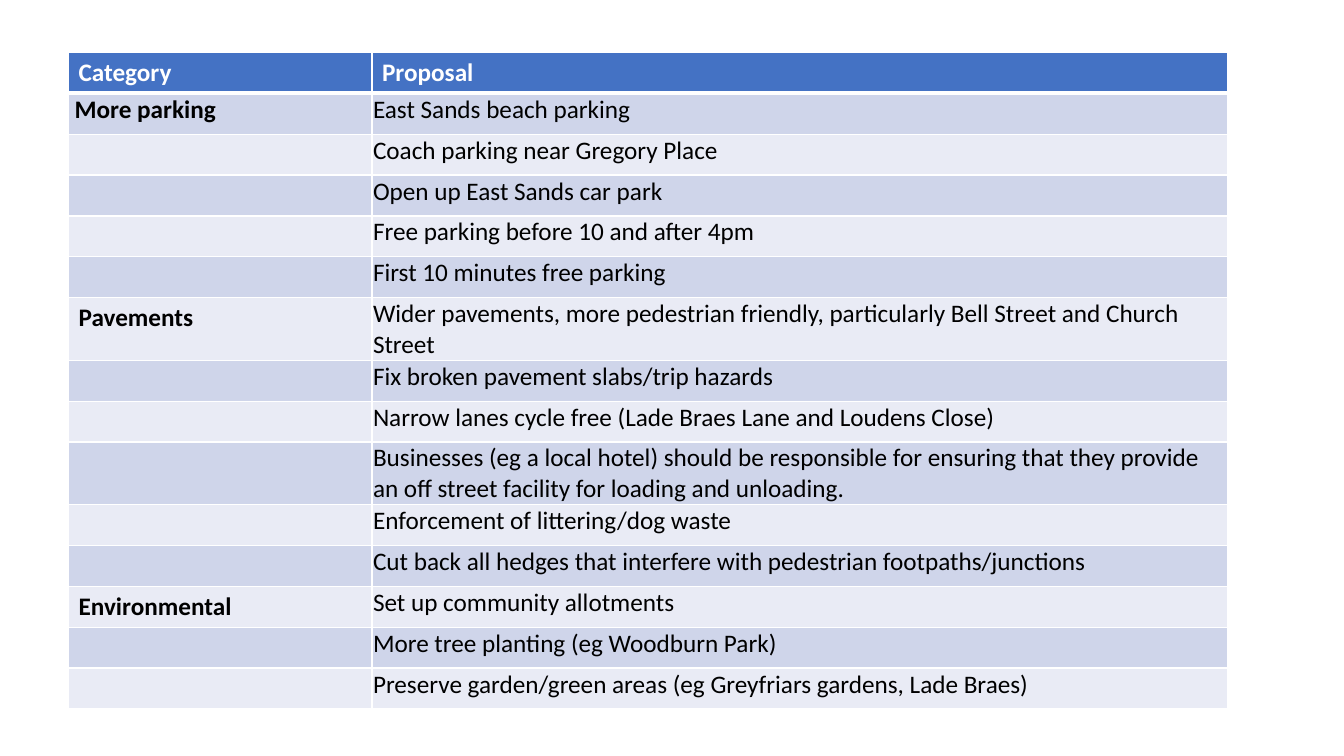
from lxml.etree import SubElement as Sub
from pptx import Presentation
from pptx.dml.color import RGBColor as Rgb
from pptx.oxml.ns import qn
from pptx.util import Inches as In, Pt

HUES = {"head": "4472C4", "odd": "CFD5EA", "even": "E9EBF5",
        "white": "FFFFFF", "black": "000000"}
FONT = "Calibri"
COLS = (3.01, 8.49)
ROW = Pt(29.2)
TIGHT = (0.01, 0.01, 0.01, 0)
INDENT = (0.06, 0.01, 0.01, 0)
ROOMY = (0.1, 0.05, 0.1, 0.05)

GROUPS = [
    ("More parking", INDENT, [
        "East Sands beach parking",
        "Coach parking near Gregory Place",
        "Open up East Sands car park",
        "Free parking before 10 and after 4pm",
        "First 10 minutes free parking"]),
    ("Pavements", ROOMY, [
        "Wider pavements, more pedestrian friendly, particularly Bell Street "
        "and Church Street",
        "Fix broken pavement slabs/trip hazards",
        "Narrow lanes cycle free (Lade Braes Lane and Loudens Close)",
        "Businesses (eg a local hotel) should be responsible for ensuring that "
        "they provide an off street facility for loading and unloading.",
        "Enforcement of littering/dog waste",
        "Cut back all hedges that interfere with pedestrian "
        "footpaths/junctions"]),
    ("Environmental", ROOMY, [
        "Set up community allotments",
        "More tree planting (eg Woodburn Park)",
        "Preserve garden/green areas (eg Greyfriars gardens, Lade Braes)"]),
]


def write(cell, text, size=18, hue="black", bold=False, pad=ROOMY):
    (cell.margin_left, cell.margin_top,
     cell.margin_right, cell.margin_bottom) = map(In, pad)
    para = cell.text_frame.paragraphs[0]
    para.font.size = Pt(size)
    if text:
        run = para.add_run()
        run.text = text
        font = run.font
        font.name, font.size, font.bold = FONT, Pt(size), bold
        font.color.rgb = Rgb.from_string(HUES[hue])


def paint(cell, hue, top=1, base=1):
    props = cell._tc.get_or_add_tcPr()
    for side, width in zip("LRTB", (1, 1, top, base)):
        line = Sub(props, qn(f"a:ln{side}"), w=str(Pt(width)))
        Sub(Sub(line, qn("a:solidFill")), qn("a:srgbClr"), val=HUES["white"])
    cell.fill.solid()
    cell.fill.fore_color.rgb = Rgb.from_string(HUES[hue])


def draw_table(slide, left, top, groups):
    rows = [(name if i == 0 else "", pad, item)
            for name, pad, items in groups for i, item in enumerate(items)]
    count = len(rows) + 1
    table = slide.shapes.add_table(count, len(COLS), In(left), In(top),
                                   In(sum(COLS)), ROW * count).table
    for col, width in zip(table.columns, COLS):
        col.width = In(width)
    for row in table.rows:
        row.height = ROW
    for i, title in enumerate(("Category", "Proposal")):
        cell = table.cell(0, i)
        write(cell, title, hue="white", bold=True)
        paint(cell, "head", base=3)
    for i, (name, pad, item) in enumerate(rows, 1):
        write(table.cell(i, 0), name, bold=True, pad=pad if name else ROOMY)
        write(table.cell(i, 1), item, pad=TIGHT)
        for cell in table.rows[i].cells:
            paint(cell, "odd" if i % 2 else "even", top=3 if i == 1 else 1)


def main():
    deck = Presentation()
    deck.slide_width, deck.slide_height = In(13.33), In(7.5)
    slide = deck.slides.add_slide(deck.slide_layouts[6])
    draw_table(slide, 0.68, 0.52, GROUPS)
    deck.save("out.pptx")


if __name__ == "__main__":
    main()
